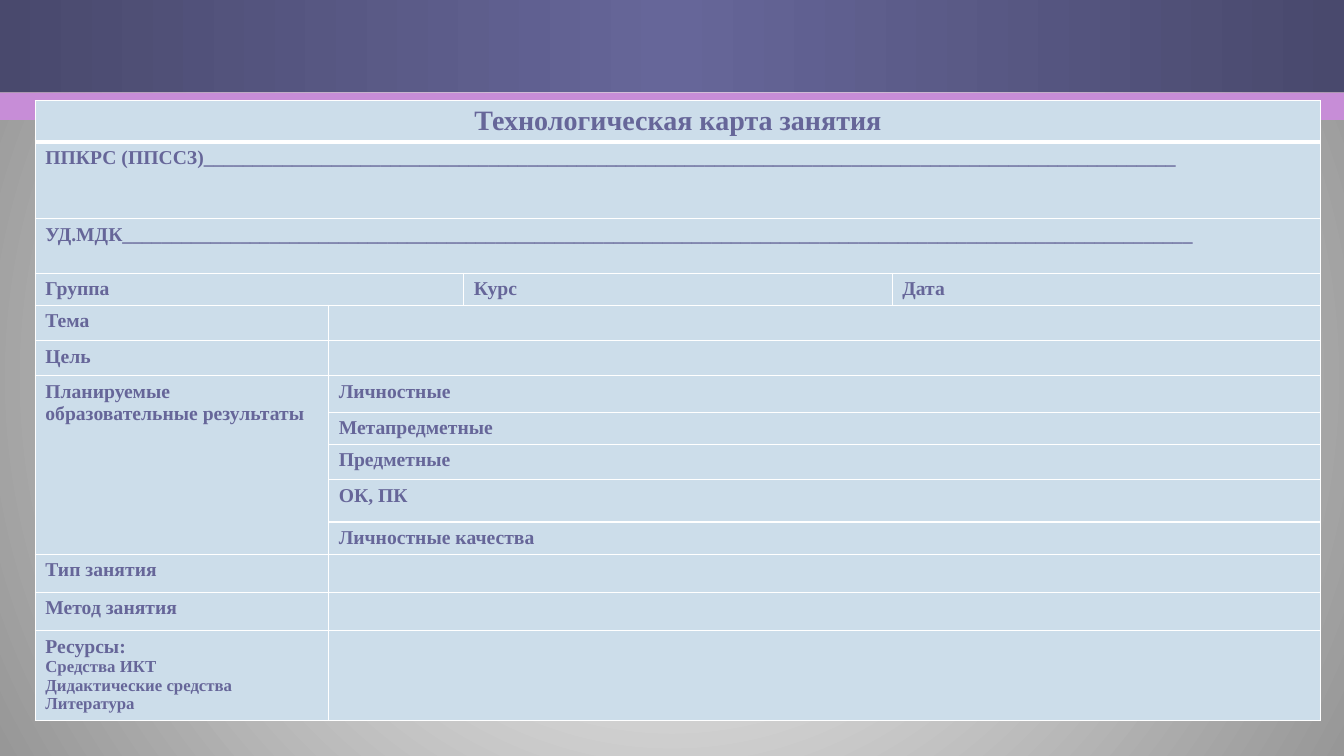
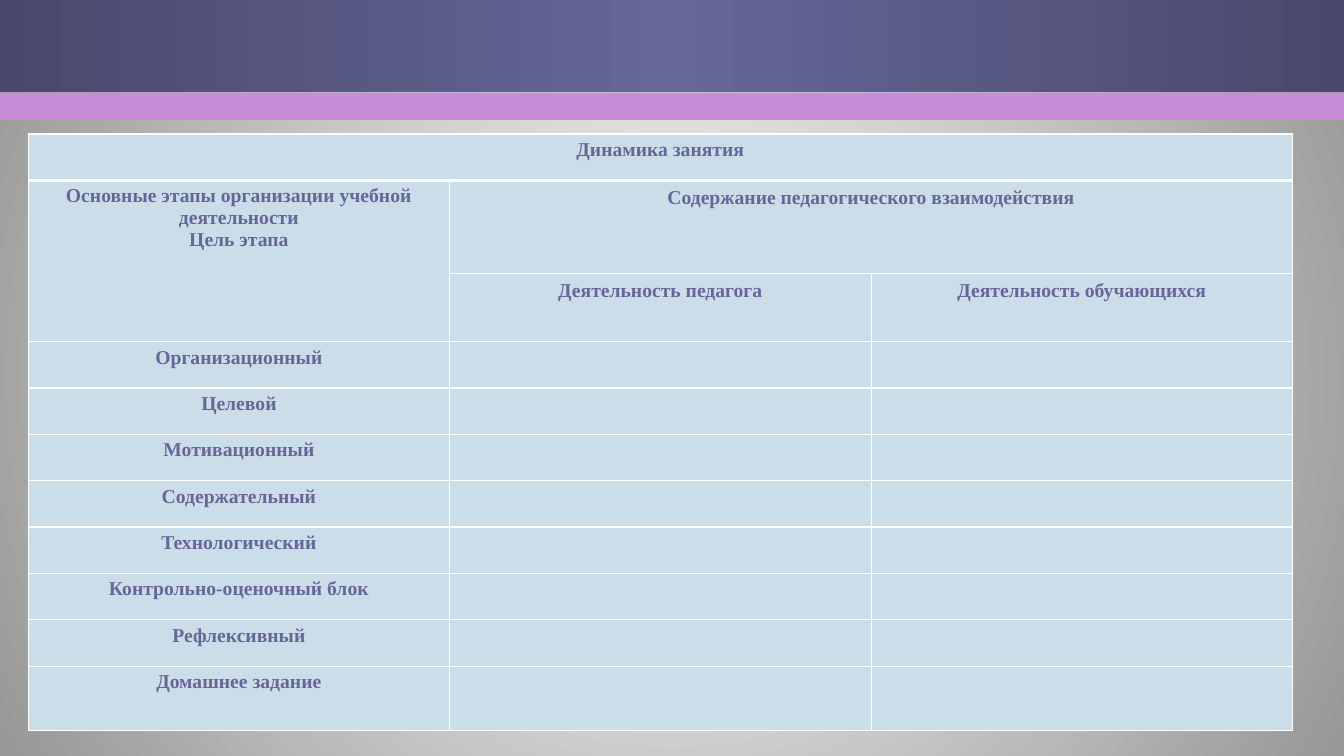
from lxml import etree
from pptx import Presentation, util as u
from pptx.dml.color import RGBColor
from pptx.enum import shapes, text
from pptx.oxml import parse_xml
from pptx.oxml.ns import nsdecls, qn

INK, CELL, WHITE, LILAC = "666699", "CCDDEA", "FFFFFF", "C78DD7"
FONT = "Times New Roman"
CENTER = text.PP_ALIGN.CENTER

prs = Presentation()
prs.slide_width, prs.slide_height = u.Inches(13.33), u.Inches(7.5)
W, H = prs.slide_width, prs.slide_height
UNIT = H / 750


def gradient(old, stops, direction):
    gs = "".join(f'<a:gs pos="{pos * 1000}"><a:srgbClr val="{c}"/></a:gs>' for pos, c in stops)
    new = parse_xml(f'<a:gradFill {nsdecls("a")} rotWithShape="1"><a:gsLst>{gs}</a:gsLst>{direction}</a:gradFill>')
    old.getparent().replace(old, new)


def put(cell, value, size=14, align=None, spacing=None, small=None):
    tf = cell.text_frame
    for i, line in enumerate(value.split("\n")):
        p = tf.paragraphs[0] if i == 0 else tf.add_paragraph()
        p.alignment, p.line_spacing = align, spacing
        if not line:
            etree.SubElement(p._p, qn("a:endParaRPr"), sz=str(size * 100))
            continue
        r = p.add_run()
        r.text = line
        r.font.name, r.font.bold = FONT, True
        r.font.size = u.Pt(small if small and i else size)
        r.font.color.rgb = RGBColor.from_string(INK)


master = prs.slide_master
master.background.fill.gradient()
gradient(master._element.xpath(".//p:bgPr/a:gradFill")[0], [(0, WHITE), (100, "979797")],
         '<a:path path="circle"><a:fillToRect l="50000" t="50000" r="50000" b="50000"/></a:path>')

lesson = [
    (0, 0, 1, 4, "Технологическая карта занятия", dict(size=20, align=CENTER)),
    (1, 0, 1, 4, "ППКРС (ППССЗ)" + "_" * 99, {}),
    (2, 0, 1, 4, "УД.МДК" + "_" * 109, {}),
    (3, 0, 1, 2, "Группа", {}),
    (3, 2, 1, 1, "Курс", {}),
    (3, 3, 1, 1, "Дата", {}),
    (6, 0, 5, 1, "Планируемые\nобразовательные результаты", {}),
    (13, 0, 1, 1, "Ресурсы:\nСредства ИКТ\nДидактические средства\nЛитература", dict(small=12)),
]
for row, label in [(4, "Тема"), (5, "Цель"), (11, "Тип занятия"), (12, "Метод занятия")]:
    lesson.append((row, 0, 1, 1, label, {}))
results = {6: "Личностные", 7: "Метапредметные", 8: "Предметные", 9: "ОК, ПК", 10: "Личностные качества"}
for row in range(4, 14):
    lesson.append((row, 1, 1, 3, results.get(row, ""), {}))

mid, loose = dict(align=CENTER), dict(align=CENTER, spacing=1.07)
stages = [
    (0, 0, 1, 3, "Динамика занятия", mid),
    (1, 0, 2, 1, "Основные этапы организации учебной деятельности\nЦель этапа", mid),
    (1, 1, 1, 2, "Содержание педагогического взаимодействия", loose),
    (2, 1, 1, 1, "Деятельность педагога", loose),
    (2, 2, 1, 1, "Деятельность обучающихся", loose),
]
for row, label in enumerate(["Организационный", "Целевой", "Мотивационный", "Содержательный", "Технологический",
                             "Контрольно-оценочный блок", "Рефлексивный", "Домашнее задание"], 3):
    stages.append((row, 0, 1, 1, label, mid))

tables = [
    (35, 100, [291, 134, 425, 425], [41, 76, 54, 32, 35, 35, 36, 32, 35, 42, 32, 38, 38, 89], lesson),
    (28, 133, [418] * 3, [46, 92, 68] + [46] * 7 + [64], stages),
]

for left, top, cols, rows, entries in tables:
    s = prs.slides.add_slide(prs.slide_layouts[6])
    box = [int(n * UNIT) for n in (left, top, sum(cols), sum(rows))]
    table = s.shapes.add_table(len(rows), len(cols), *box).table
    table.horz_banding = False
    for lines, sizes, name in ((table.columns, cols, "width"), (table.rows, rows, "height")):
        for line, n in zip(lines, sizes):
            setattr(line, name, int(n * UNIT))

    filled = {(row, col): (value, fmt) for row, col, _, _, value, fmt in entries}
    for row in range(len(rows)):
        for col in range(len(cols)):
            cell = table.cell(row, col)
            value, fmt = filled.get((row, col), ("", {}))
            put(cell, value, **fmt)
            cell.fill.solid()
            cell.fill.fore_color.rgb = RGBColor.from_string(CELL)
            widths = dict(lnL=1, lnR=1, lnT=3 if row == 1 else 1, lnB=3 if row == 0 else 1)
            for i, (side, pt) in enumerate(widths.items()):
                cell._tc.tcPr.insert(i, parse_xml(
                    f'<a:{side} {nsdecls("a")} w="{u.Pt(pt)}"><a:solidFill>'
                    f'<a:srgbClr val="{WHITE}"/></a:solidFill></a:{side}>'))
    for row, col, down, across, _, _ in entries:
        if down * across > 1:
            table.cell(row, col).merge(table.cell(row + down - 1, col + across - 1))

s = prs.slides[0]
for i, (top, height) in enumerate([(0, 91), (92, 27)]):
    sp = s.shapes.add_shape(shapes.MSO_SHAPE.RECTANGLE, 0, int(top * UNIT), W, int(height * UNIT))
    sp.shadow.inherit = False
    sp.line.fill.background()
    if i == 0:
        sp.fill.gradient()
        gradient(sp._element.spPr.find(qn("a:gradFill")), [(0, "49496D"), (50, INK), (100, "49496D")],
                 '<a:lin ang="0" scaled="0"/>')
    else:
        sp.fill.solid()
        sp.fill.fore_color.rgb = RGBColor.from_string(LILAC)
    master.shapes._spTree.insert(2 + i, sp._element)

prs.save("out.pptx")
